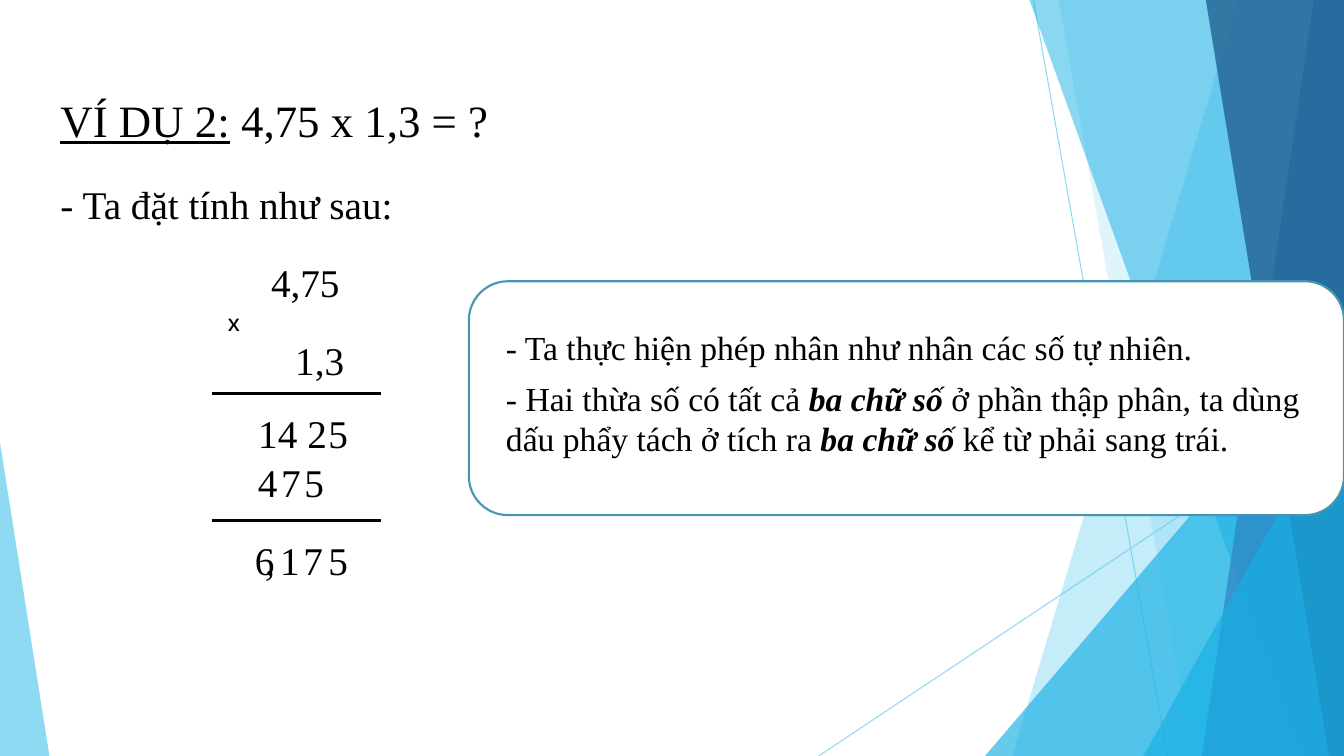
"""Build a slide that works through a decimal multiplication."""
from pptx import Presentation
from pptx.dml.color import RGBColor as Rgb
from pptx.enum.shapes import MSO_CONNECTOR as Link, MSO_SHAPE as Kind
from pptx.enum.text import MSO_ANCHOR as Anchor, MSO_AUTO_SIZE as Fit, PP_ALIGN as Align
from pptx.oxml.ns import qn
from pptx.util import Inches, Pt
from lxml.etree import SubElement as Sub

WIDE, HIGH = 13.33, 7.5
SERIF, SANS = "Times New Roman", "Cabin"
COLORS = {"ink": "000000", "paper": "FFFFFF", "edge": "4696B1", "sky": "5FCBEF",
          "cyan": "17B0E4", "blue": "2E83C3", "navy": "226292"}

RAYS = [(10.25, 0, 11.58, HIGH), (WIDE, 4.03, 8.12, HIGH)]
# Band: top x, bottom x. Peak: left, top, width, tip.
DECOR = [("band", (12.28, 10.04), "sky", 36),
         ("band", (10.5, 11.83), "sky", 20),
         ("peak", (9.77, 3.33, 3.56, 1), "cyan", 66),
         ("band", (10.21, 12.91), "cyan", 50),
         ("band", (13.03, 11.92), "blue", 70),
         ("band", (11.96, 13.18), "navy", 80),
         ("peak", (11.34, 3.93, 1.99, 1), "cyan", 66),
         ("peak", (0, 4.39, 0.49, 0), "sky", 70)]

TITLE = [("VÍ DỤ 2:", "u"), (" 4,75 x 1,3 = ?", "")]
INTRO = "- Ta đặt tính như sau:"
FACTORS = [("4,75", 2.59, 2.51, 1.06), ("1,3", 2.83, 3.29, 0.77)]
ROWS = [(4.01, [("14", 2.46, 0.59), ("2", 2.95, 0.26), ("5", 3.16, 0.26)]),
        (4.5, [("4", 2.46, 0.3), ("7", 2.69, 0.26), ("5", 2.92, 0.26)]),
        (5.27, [("6", 2.43, 0.26), (",", 2.63, 0.09), ("1", 2.68, 0.26),
                ("7", 2.91, 0.26), ("5", 3.16, 0.26)])]
RULES = [3.9, 5.16]
NOTES = [(3.19, 0.5, [("- Ta thực hiện phép nhân như nhân các số tự nhiên.", "")]),
         (3.7, 0.91, [("- Hai thừa số có tất cả ", ""), ("ba chữ số ", "bi"),
                      ("ở phần thập phân, ta dùng dấu phẩy tách ở tích ra ", ""),
                      ("ba chữ số ", "bi"), ("kể từ phải sang trái.", "")])]


def tint(name):
    return Rgb.from_string(COLORS[name])


def fade(shape, pct):
    for node in shape._element.iter(qn("a:srgbClr")):
        Sub(node, qn("a:alpha")).set("val", str(pct * 1000))


def line(x1, y1, x2, y2, color, width):
    link = slide.shapes.add_connector(Link.STRAIGHT, *map(Inches, (x1, y1, x2, y2)))
    link.line.color.rgb = tint(color)
    link.line.width = Pt(width)
    Sub(link._element.spPr, qn("a:effectLst"))
    return link


def band(top, base):
    pts = [(top, 0), (WIDE, 0), (WIDE, HIGH), (base, HIGH)]
    pts = [(Inches(x), Inches(y)) for x, y in pts]
    pen = slide.shapes.build_freeform(*pts[0])
    pen.add_line_segments(pts[1:], close=True)
    return pen.convert_to_shape()


def peak(left, top, width, tip):
    box = map(Inches, (left, top, width, HIGH - top))
    shape = slide.shapes.add_shape(Kind.ISOSCELES_TRIANGLE, *box)
    shape.adjustments[0] = tip
    return shape


def write(shape, runs, size, font=SERIF, align=Align.LEFT):
    frame = shape.text_frame
    frame.word_wrap = True
    frame.auto_size = Fit.NONE
    frame.vertical_anchor = Anchor.TOP
    para = frame.paragraphs[0]
    para.alignment = align
    for text, style in runs:
        run = para.add_run()
        run.text = text
        run.font.name, run.font.size = font, Pt(size)
        run.font.color.rgb = tint("ink")
        run.font.bold, run.font.italic = "b" in style, "i" in style
        run.font.underline = "u" in style
    return frame


def label(runs, left, top, width, high, size, **look):
    box = slide.shapes.add_textbox(*map(Inches, (left, top, width, high)))
    return write(box, runs, size, **look)


deck = Presentation()
deck.slide_width, deck.slide_height = Inches(WIDE), Inches(HIGH)
slide = deck.slides.add_slide(deck.slide_layouts[5])

for ray in RAYS:
    fade(line(*ray, "sky", 0.75), 70)
draw = {"band": band, "peak": peak}
for kind, spot, color, pct in DECOR:
    shape = draw[kind](*spot)
    shape.shadow.inherit = False
    shape.fill.solid()
    shape.fill.fore_color.rgb = tint(color)
    shape.line.fill.background()
    fade(shape, pct)

title = slide.shapes.title
title.left, title.top, title.width, title.height = map(Inches, (0, 0.87, WIDE, 0.64))
write(title, TITLE, 32).margin_left = Inches(0.6)
label([(INTRO, "")], 0, 1.74, WIDE, 0.57, 28).margin_left = Inches(0.6)

for text, left, top, width in FACTORS:
    label([(text, "")], left, top, width, 0.57, 28)
label([("x", "")], 2.1, 2.99, 0.44, 0.4, 18, font=SANS, align=Align.CENTER)
for top, digits in ROWS:
    for text, left, width in digits:
        label([(text, "")], left, top, width, 0.57, 28, align=Align.CENTER)
for y in RULES:
    line(2.1, y, 3.78, y, "ink", 2.25)

card = slide.shapes.add_shape(Kind.ROUNDED_RECTANGLE, *map(Inches, (4.65, 2.79, 8.68, 2.32)))
card.shadow.inherit = False
card.fill.solid()
card.fill.fore_color.rgb = tint("paper")
card.line.color.rgb = tint("edge")
card.line.width = Pt(1.5)
for top, high, runs in NOTES:
    label(runs, 4.92, top, 8.41, high, 24)

deck.save("out.pptx")
